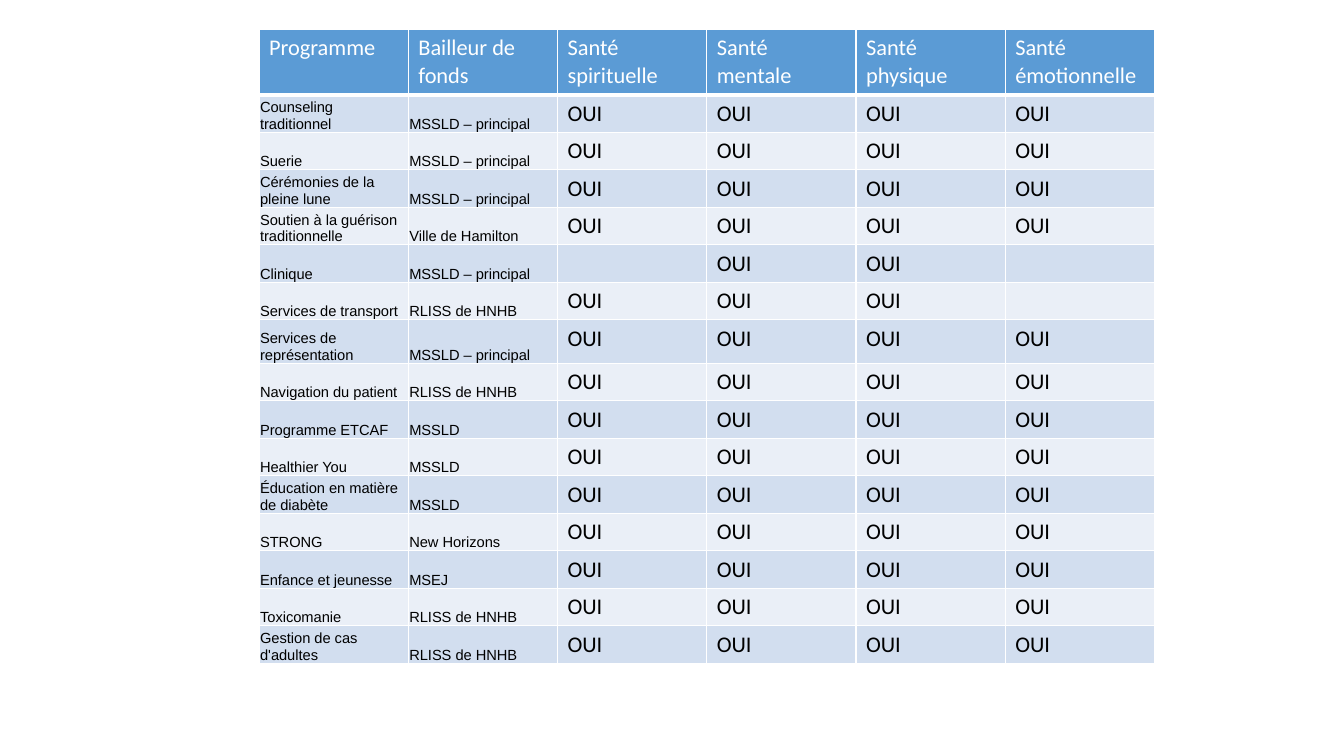
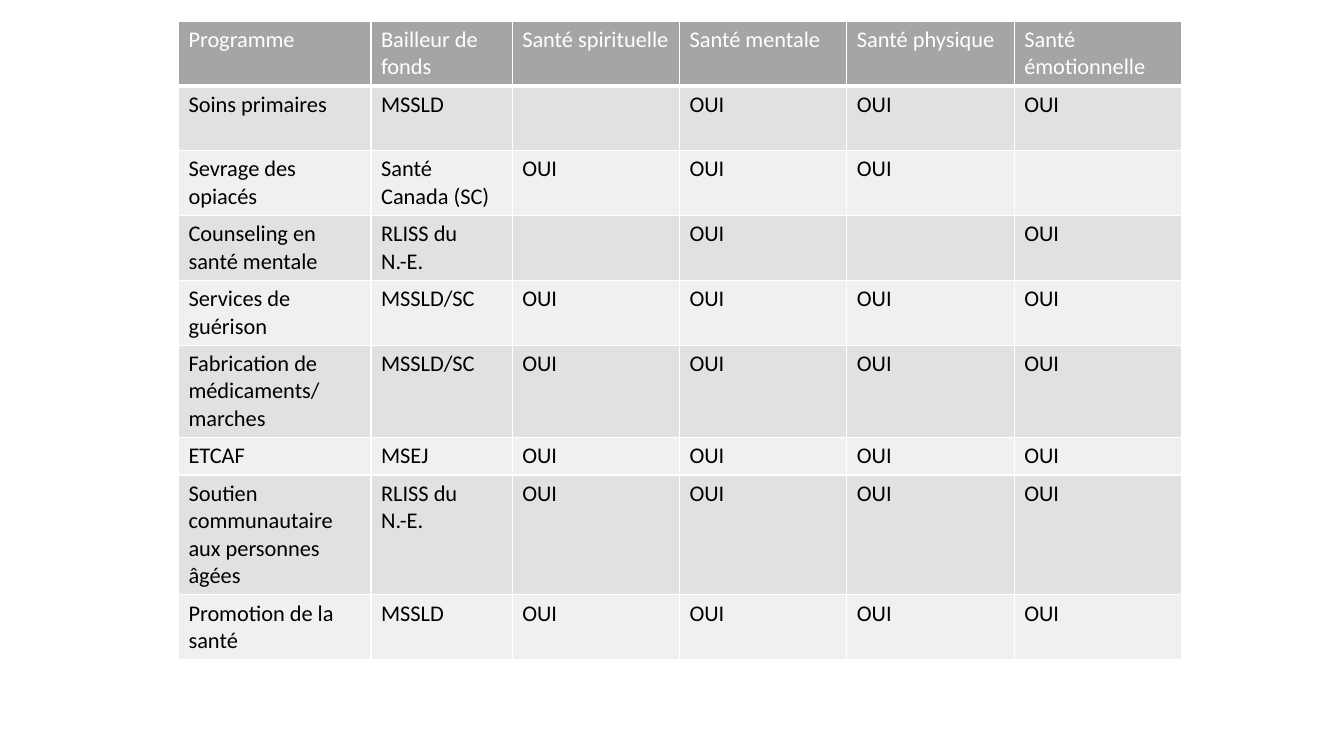
from lxml import etree
from pptx import Presentation
from pptx.dml.color import RGBColor
from pptx.enum.text import MSO_ANCHOR
from pptx.oxml.ns import qn
from pptx.util import Inches, Pt

BOTTOM, TOP = MSO_ANCHOR.BOTTOM, MSO_ANCHOR.TOP
BLANK = 6
COLORS = {"white": "FFFFFF", "black": "000000"}
BLUE = {"head": "5B9BD5", "odd": "D2DEEF", "even": "EAEFF7"}
GREY = {"head": "A5A5A5", "odd": "E1E1E1", "even": "F0F0F0"}
HEADS = ["Programme", "Bailleur de fonds", "Santé spirituelle",
         "Santé mentale", "Santé physique", "Santé émotionnelle"]
YES, ALL = "OUI", "1111"

LOCAL = [
    ("Counseling traditionnel", "MSSLD – principal", ALL),
    ("Suerie", "MSSLD – principal", ALL),
    ("Cérémonies de la pleine lune", "MSSLD – principal", ALL),
    ("Soutien à la guérison traditionnelle", "Ville de Hamilton", ALL),
    ("Clinique", "MSSLD – principal", "0110"),
    ("Services de transport", "RLISS de HNHB", "1110"),
    ("Services de représentation", "MSSLD – principal", ALL),
    ("Navigation du patient", "RLISS de HNHB", ALL),
    ("Programme ETCAF", "MSSLD", ALL),
    ("Healthier You", "MSSLD", ALL),
    ("Éducation en matière de diabète", "MSSLD", ALL),
    ("STRONG", "New Horizons", ALL),
    ("Enfance et jeunesse", "MSEJ", ALL),
    ("Toxicomanie", "RLISS de HNHB", ALL),
    ("Gestion de cas d'adultes", "RLISS de HNHB", ALL),
]
NORTH = [
    ("Soins primaires", "MSSLD", "0111"),
    ("Sevrage des opiacés", "Santé Canada (SC)", "1110"),
    ("Counseling en santé mentale", "RLISS du \nN.-E.", "0101"),
    ("Services de guérison", "MSSLD/SC", ALL),
    ("Fabrication de médicaments/\nmarches", "MSSLD/SC", ALL),
    ("ETCAF", "MSEJ", ALL),
    ("Soutien communautaire aux personnes âgées", "RLISS du \nN.-E.", ALL),
    ("Promotion de la santé", "MSSLD", ALL),
]


def rule(cell, base):
    """Draw white borders round a cell, with the given width at its base."""
    props = cell._tc.get_or_add_tcPr()
    for side, width in (("L", 1), ("R", 1), ("T", 1), ("B", base)):
        line = etree.SubElement(props, qn("a:ln" + side), w=str(Pt(width)))
        fill = etree.SubElement(line, qn("a:solidFill"))
        etree.SubElement(fill, qn("a:srgbClr"), val=COLORS["white"])


def style(cell, text, fill, color, small=False, base=1):
    """Write one cell, with its borders, fill and font."""
    rule(cell, base)
    cell.fill.solid()
    cell.fill.fore_color.rgb = RGBColor.from_string(fill)
    cell.vertical_anchor = BOTTOM if small else TOP
    if small:
        cell.margin_left = cell.margin_right = cell.margin_top = Inches(0.01)
        cell.margin_bottom = 0
    para = cell.text_frame.paragraphs[0]
    para.text = text
    font = para.font
    font.name = "Arial" if small else "Calibri"
    font.size = Pt(10.5 if small else 16)
    font.bold = False
    font.color.rgb = RGBColor.from_string(color)
    if not text:
        para._p.get_or_add_endParaRPr().set("sz", str(font.size.centipoints))


def grid(slide, left, top, widths, heights, rows, theme, small=False):
    """Place a programme table; small sets the first two columns in fine print."""
    frame = slide.shapes.add_table(
        len(heights), len(widths), Inches(left), Inches(top),
        Inches(sum(widths)), Inches(sum(heights)))
    table = frame.table
    for col, width in zip(table.columns, widths):
        col.width = Inches(width)
    for row, height in zip(table.rows, heights):
        row.height = Inches(height)
    for c, head in enumerate(HEADS):
        style(table.cell(0, c), head, theme["head"], COLORS["white"], base=3)
    for r, (name, funder, marks) in enumerate(rows, 1):
        fill = theme["odd" if r % 2 else "even"]
        texts = [name, funder] + [YES if m == "1" else "" for m in marks]
        for c, text in enumerate(texts):
            style(table.cell(r, c), text, fill, COLORS["black"], small and c < 2)


def main():
    """Build and save the deck."""
    deck = Presentation()
    deck.slide_width, deck.slide_height = Inches(13.33), Inches(7.5)
    first, second = (deck.slides.add_slide(deck.slide_layouts[BLANK])
                     for _ in range(2))
    grid(first, 2.57, 0.29, [1.48] * 6,
         [0.65] + [0.37] * 6 + [0.43] + [0.37] * 8, LOCAL, BLUE, small=True)
    grid(second, 1.77, 0.21, [1.91, 1.4] + [1.66] * 4,
         [0.64] * 5 + [0.91, 0.37, 1.19, 0.64], NORTH, GREY)
    deck.save("out.pptx")


if __name__ == "__main__":
    main()
